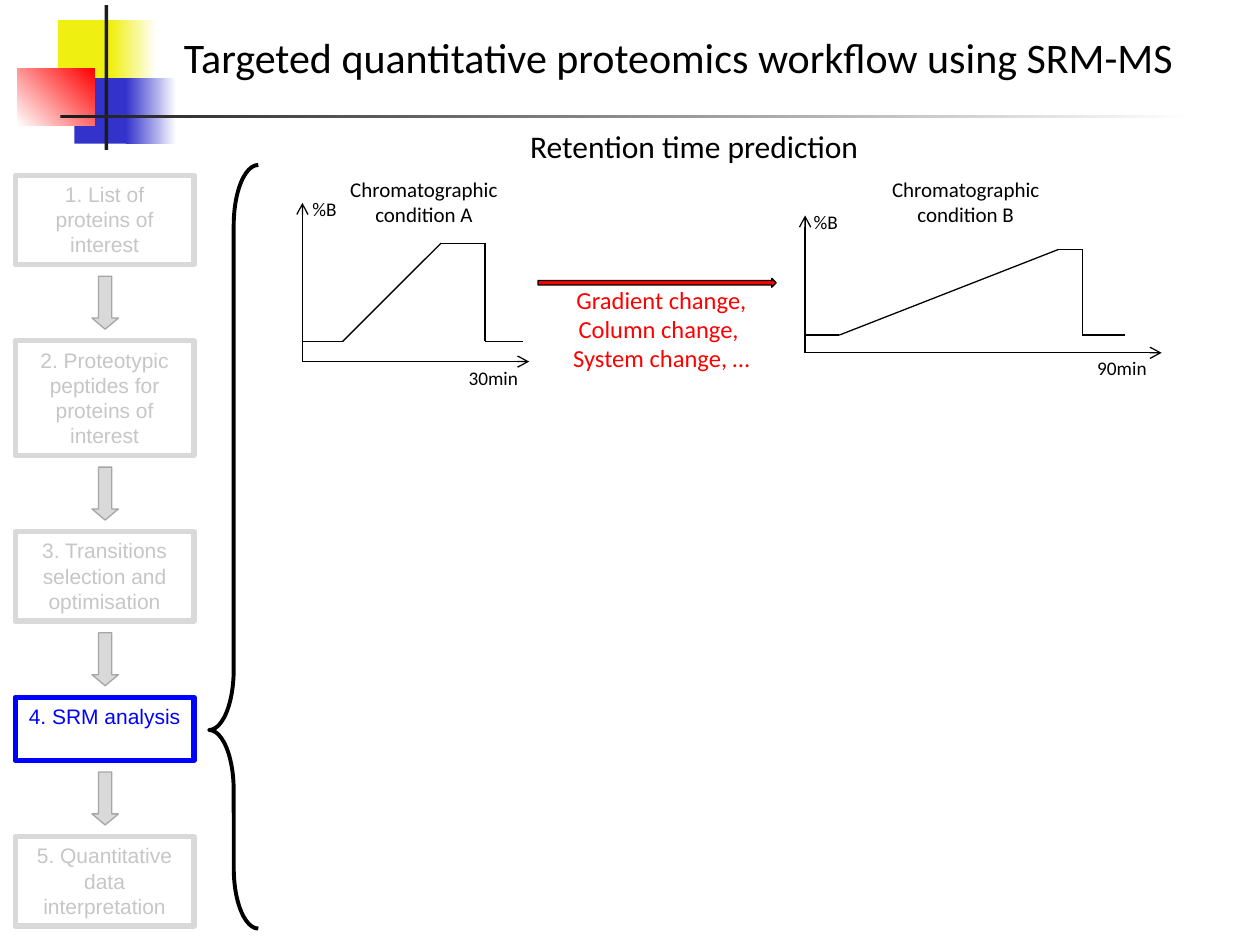
from itertools import pairwise
from lxml.etree import SubElement
from pptx import Presentation
from pptx.dml.color import RGBColor
from pptx.enum.shapes import MSO_CONNECTOR, MSO_SHAPE
from pptx.enum.text import MSO_ANCHOR, MSO_AUTO_SIZE, PP_ALIGN
from pptx.oxml.ns import qn
from pptx.util import Inches, Pt

HUES = {
    "ink": "000000", "bar": "1C1C1C", "white": "FFFFFF", "gold": "EFEF11",
    "navy": "3333CC", "red": "FF0000", "blue": "0000FF",
    "pale": "D9D9D9", "edge": "A6A6A6", "dim": "C6C6C6",
}
BODY = {"word_wrap": True, "vertical_anchor": MSO_ANCHOR.TOP}
GROW = {**BODY, "auto_size": MSO_AUTO_SIZE.SHAPE_TO_FIT_TEXT}
FREE = {**GROW, "word_wrap": False}

LOGO = [
    ((4.6, 1.6, 4.8, 5.2), ("gold",), 0),
    ((8.8, 1.6, 3.6, 5.2), ("gold", "white"), 0),
    ((5.9, 6.2, 4.6, 5.2), ("navy",), 0),
    ((10, 6.2, 4, 5.2), ("navy", "white"), 0),
    ((1.4, 5.4, 6.1, 4.6), ("white", "red"), 45),
    ((8.3, 0.4, 0.3, 11.5), ("bar",), 0),
    ((4.8, 9.1, 90, 0.3), ("bar", "white"), 0),
]
STEPS = [
    ("1. List of proteins of interest", 7.1),
    ("2. Proteotypic peptides for proteins of interest", 9.1),
    ("3. Transitions selection and optimisation", 7.1),
    ("4. SRM analysis", 5),
    ("5. Quantitative data interpretation", 7.1),
]
ACTIVE = 3
GAP = 6.05
PLOTS = [
    {
        "axes": [(24, 16.1), (24, 28.7), (42, 28.7)],
        "curve": [(24, 27.1), (27.2, 27.1), (35, 19.3), (38.5, 19.3),
                  (38.5, 27.1), (41.5, 27.1)],
        "name": ("Chromatographic condition A", (24.8, 13.5, 17.7, 5.1)),
        "time": ("30min", (36.2, 28.6, 16.2, 2.9)),
        "unit": ("%B", (23.8, 15.2, 5.8, 2.9)),
    },
    {
        "axes": [(63.9, 17.1), (63.9, 28), (92.2, 28)],
        "curve": [(63.9, 26.6), (66.6, 26.6), (84, 19.8), (85.9, 19.8),
                  (85.9, 26.6), (89.3, 26.6)],
        "name": ("Chromatographic condition B", (67.8, 13.5, 17.7, 5.1)),
        "time": ("90min", (86.1, 27.8, 12.7, 2.9)),
        "unit": ("%B", (63.6, 16.2, 5.4, 2.9)),
    },
]


def grid(cells):
    """Turn cells of a 100 by 75 grid into slide lengths."""
    return [Inches(cell / 10) for cell in cells]


def tint(name):
    """Look up a named colour."""
    return RGBColor.from_string(HUES[name])


def apply(item, values):
    """Set each format value on an item."""
    for key, value in values.items():
        setattr(item, key, value)


def paint(shape, hues, turn):
    """Fill a shape with no colour, one colour or a gradient of two."""
    fill = shape.fill
    if not hues:
        fill.background()
    elif len(hues) == 1:
        fill.solid()
        fill.fore_color.rgb = tint(hues[0])
    else:
        fill.gradient()
        fill.gradient_angle = turn
        for stop, hue in zip(fill.gradient_stops, hues):
            stop.color.rgb = tint(hue)


def form(slide, kind, cells, hues=(), edge=None, width=0.75, adj=(), turn=0):
    """Add a preset shape."""
    shape = slide.shapes.add_shape(kind, *grid(cells))
    shape.shadow.inherit = False
    paint(shape, hues, turn)
    if edge:
        apply(shape.line, {"width": Pt(width)})
        shape.line.color.rgb = tint(edge)
    else:
        shape.line.fill.background()
    for spot, value in enumerate(adj):
        shape.adjustments[spot] = value
    return shape


def write(frame, lines, size, hue="ink", face="Calibri", align=PP_ALIGN.CENTER, body=GROW):
    """Write one paragraph for each line."""
    apply(frame, body)
    for spot, line in enumerate(lines):
        para = frame.add_paragraph() if spot else frame.paragraphs[0]
        para.alignment = align
        run = para.add_run()
        run.text = line
        apply(run.font, {"size": Pt(size), "name": face})
        run.font.color.rgb = tint(hue)


def label(slide, lines, cells, size, **look):
    """Add a text box."""
    write(slide.shapes.add_textbox(*grid(cells)).text_frame, lines, size, **look)


def stroke(slide, start, end, tip=False):
    """Add a straight line, with an open arrowhead if asked."""
    line = slide.shapes.add_connector(MSO_CONNECTOR.STRAIGHT, *grid(start + end))
    line.line.width = Pt(0.75)
    line.line.color.rgb = tint("ink")
    if tip:
        SubElement(line.line._get_or_add_ln(), qn("a:tailEnd"), type="arrow")
    SubElement(line._element.spPr, qn("a:effectLst"))


def flow(slide):
    """Stack the steps with an arrow in each gap."""
    top = 13.9
    for spot, (text, high) in enumerate(STEPS):
        edge, hue = ("blue", "blue") if spot == ACTIVE else ("pale", "dim")
        box = form(slide, MSO_SHAPE.RECTANGLE, (1.2, top, 14.2, high), edge=edge, width=3)
        write(box.text_frame, [text], 12, hue, "Arial", body=BODY)
        top += high + GAP
        if spot < len(STEPS) - 1:
            form(slide, MSO_SHAPE.DOWN_ARROW, (7.3, top - GAP / 2 - 2.1, 2.1, 4.2),
                 ("pale",), "edge", adj=(0.5, 0.42))


def plot(slide, axes, curve, name, time, unit):
    """Draw a gradient profile with axes and labels."""
    peak, root, far = axes
    for end in (peak, far):
        stroke(slide, root, end, True)
    for start, end in pairwise(curve):
        stroke(slide, start, end)
    label(slide, [name[0]], name[1], 12)
    for text, cells in (time, unit):
        label(slide, [text], cells, 11, align=PP_ALIGN.LEFT)


def main():
    """Build and save the slide."""
    deck = Presentation()
    apply(deck, {"slide_width": Inches(10), "slide_height": Inches(7.5)})
    slide = deck.slides.add_slide(deck.slide_layouts[6])
    for cells, hues, turn in LOGO:
        form(slide, MSO_SHAPE.RECTANGLE, cells, hues, turn=turn)
    flow(slide)
    label(slide, ["Retention time prediction"], (40.9, 9.6, 28.4, 4), 18, body=FREE)
    label(slide, ["Targeted quantitative proteomics workflow using SRM-MS"],
          (13.2, 2, 81.3, 5), 24, body=FREE)
    form(slide, MSO_SHAPE.LEFT_BRACE, (16.6, 13.1, 3.9, 60.6),
         edge="ink", width=2.25, adj=(1.23, 0.74))
    for part in PLOTS:
        plot(slide, **part)
    form(slide, MSO_SHAPE.RIGHT_ARROW, (42.7, 22.1, 18.9, 0.7), ("red",), "ink")
    label(slide, ["Gradient change, Column change, ", "System change, …"],
          (44.1, 22.1, 16.8, 8.1), 14, hue="red")
    deck.save("out.pptx")


if __name__ == "__main__":
    main()
